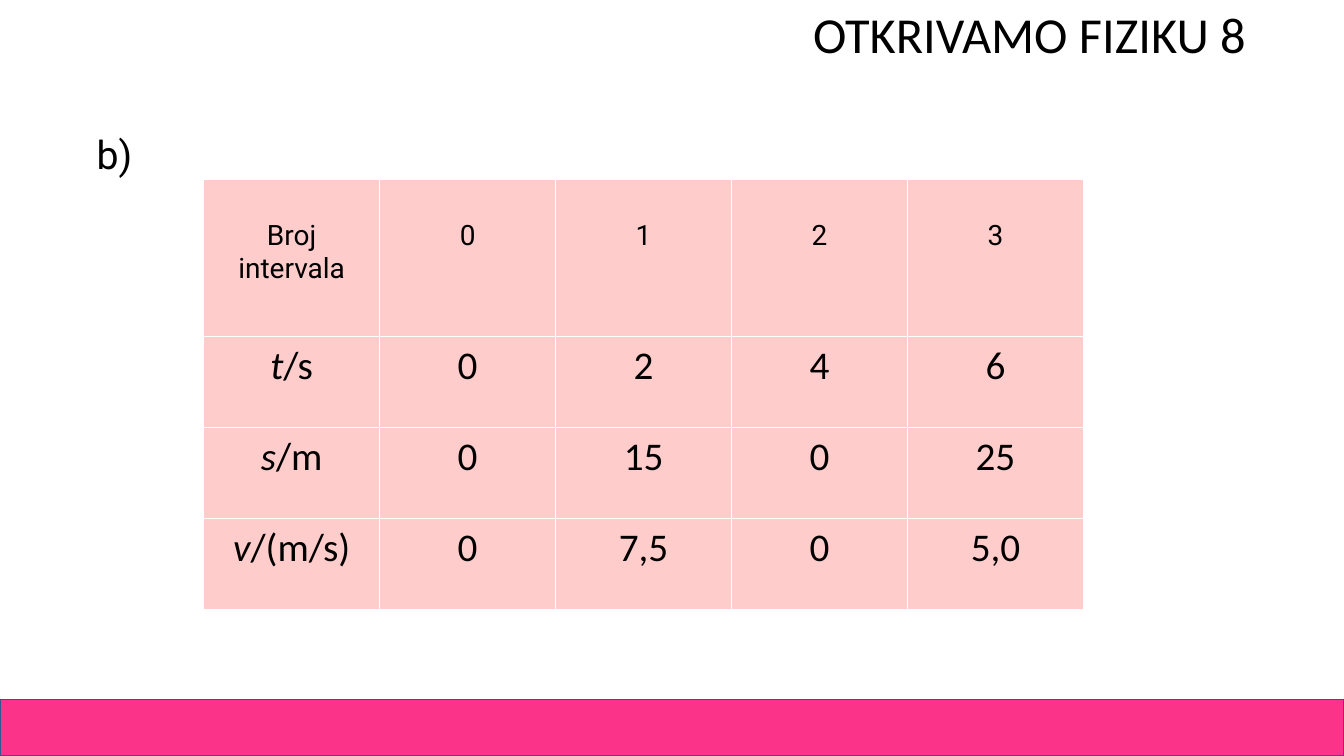
from dataclasses import dataclass

from lxml import etree
from pptx import Presentation
from pptx.dml.color import RGBColor
from pptx.enum.shapes import MSO_SHAPE
from pptx.enum.text import MSO_ANCHOR, MSO_AUTO_SIZE, PP_ALIGN
from pptx.oxml.ns import qn
from pptx.util import Pt

RECTANGLE = MSO_SHAPE.RECTANGLE
TOP = MSO_ANCHOR.TOP
NO_AUTOFIT = MSO_AUTO_SIZE.NONE
LEFT, CENTER = PP_ALIGN.LEFT, PP_ALIGN.CENTER
TITLE_ONLY = 5


@dataclass(frozen=True)
class Theme:
    ink: str = "000000"
    band: str = "FB3389"
    band_edge: str = "325491"
    cell: str = "FFCCCC"
    grid: str = "FFFFFF"
    heading_font: str = "Calibri"
    label_font: str = "Roboto"
    title_size: int = 36
    body_size: int = 28
    header_size: int = 20


class SlideBuilder:
    def __init__(self, slide, theme):
        self.slide = slide
        self.theme = theme

    def style(self, paragraph, font_name, size, align=CENTER):
        paragraph.alignment = align
        font = paragraph.font
        font.name = font_name
        font.size = Pt(size)
        font.color.rgb = RGBColor.from_string(self.theme.ink)

    def place_text(self, shape, box, text, font_name, size, align):
        shape.left, shape.top, shape.width, shape.height = map(Pt, box)
        frame = shape.text_frame
        frame.text = text
        frame.word_wrap = True
        frame.auto_size = NO_AUTOFIT
        frame.vertical_anchor = TOP
        self.style(frame.paragraphs[0], font_name, size, align)
        return frame.paragraphs[0]

    def title(self, box, text):
        self.place_text(self.slide.shapes.title, box, text,
                        self.theme.heading_font, self.theme.title_size, CENTER)

    def label(self, box, text):
        label = self.slide.shapes.add_textbox(*map(Pt, box))
        paragraph = self.place_text(label, box, text, self.theme.label_font,
                                    self.theme.body_size, LEFT)
        paragraph.line_spacing = 0.9

    def band(self, box):
        band = self.slide.shapes.add_shape(RECTANGLE, *map(Pt, box))
        band.shadow.inherit = False
        band.fill.solid()
        band.fill.fore_color.rgb = RGBColor.from_string(self.theme.band)
        band.line.color.rgb = RGBColor.from_string(self.theme.band_edge)
        band.line.width = Pt(1)

    def cell_grid(self, cell):
        """Fill a cell and draw its four borders."""
        properties = cell._tc.get_or_add_tcPr()
        for side in ("lnL", "lnR", "lnT", "lnB"):
            border = etree.SubElement(properties, qn(f"a:{side}"), w=str(Pt(1)))
            solid = etree.SubElement(border, qn("a:solidFill"))
            etree.SubElement(solid, qn("a:srgbClr"), val=self.theme.grid)
        cell.fill.solid()
        cell.fill.fore_color.rgb = RGBColor.from_string(self.theme.cell)

    def measurements(self, box, header, quantities, row_heights):
        """Add the table; each quantity is (symbol, unit, values)."""
        rows = [header] + [["", *values] for _, _, values in quantities]
        table = self.slide.shapes.add_table(
            len(rows), len(header), *map(Pt, box)).table
        for column in table.columns:
            column.width = Pt(box[2] / len(header))
        for row, height in zip(table.rows, row_heights):
            row.height = Pt(height)

        for r, texts in enumerate(rows):
            for c, text in enumerate(texts):
                cell = table.cell(r, c)
                self.cell_grid(cell)
                paragraph = cell.text_frame.paragraphs[0]
                if r == 0:
                    cell.margin_top = Pt(28)
                    self.style(paragraph, self.theme.label_font,
                               self.theme.header_size)
                else:
                    self.style(paragraph, self.theme.heading_font,
                               self.theme.body_size)
                if text:
                    paragraph.add_run().text = text

        for r, (symbol, unit, _) in enumerate(quantities, start=1):
            paragraph = table.cell(r, 0).text_frame.paragraphs[0]
            symbol_run = paragraph.add_run()
            symbol_run.text = symbol
            symbol_run.font.italic = True
            paragraph.add_run().text = unit


def main():
    presentation = Presentation()
    presentation.slide_width, presentation.slide_height = Pt(960), Pt(540)
    slide = presentation.slides.add_slide(presentation.slide_layouts[TITLE_ONLY])
    builder = SlideBuilder(slide, Theme())

    builder.band((0, 499.5, 960, 40.5))
    builder.title((538.5, -1.5, 394, 51), "OTKRIVAMO FIZIKU 8")
    builder.label((62, 93, 828, 343), "b)")
    builder.measurements(
        (145.5, 128.5, 628.5, 307),
        header=["Broj intervala", "0", "1", "2", "3"],
        quantities=[
            ("t", "/s", ["0", "2", "4", "6"]),
            ("s", "/m", ["0", "15", "0", "25"]),
            ("v", "/(m/s)", ["0", "7,5", "0", "5,0"]),
        ],
        row_heights=[112, 65, 65, 65],
    )
    presentation.save("out.pptx")


if __name__ == "__main__":
    main()
